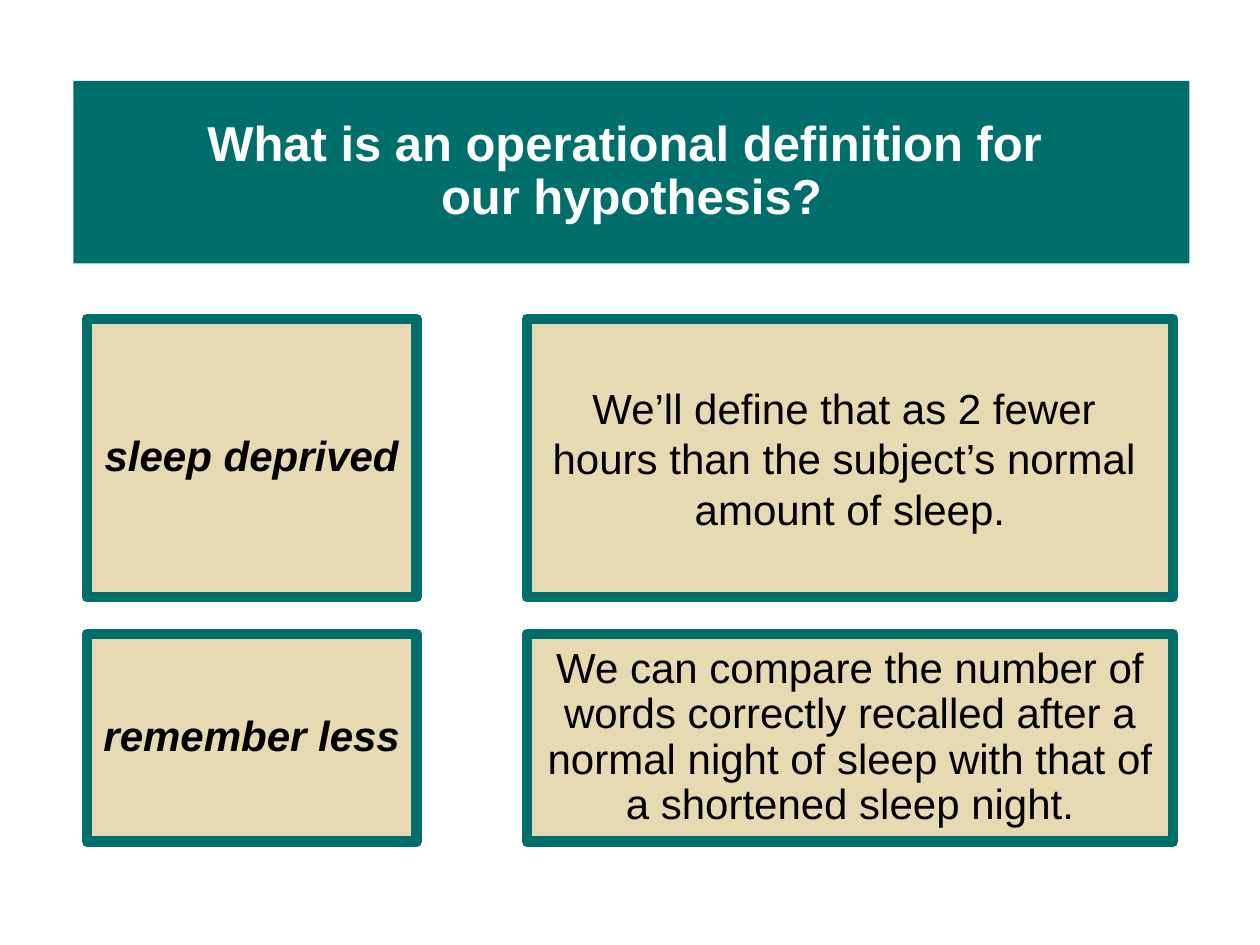
from pptx import Presentation
from pptx.dml.color import RGBColor
from pptx.enum.shapes import MSO_SHAPE
from pptx.enum.text import MSO_ANCHOR, PP_ALIGN
from pptx.util import Cm, Pt

COLORS = {"teal": "006F6C", "sand": "E7D9B1", "white": "FFFFFF", "black": "000000"}


def color(name):
    return RGBColor.from_string(COLORS[name])


def add_box(left, top, width, height, fill, paragraphs, size, font_color,
            bold=False, italic=False, spacing=0.9, before=0):
    """Add a filled rectangle; a newline within a paragraph is a line break."""
    shape = slide.shapes.add_shape(
        MSO_SHAPE.RECTANGLE, Cm(left), Cm(top), Cm(width), Cm(height))
    shape.shadow.inherit = False
    shape.fill.solid()
    shape.fill.fore_color.rgb = color(fill)
    shape.line.fill.background()
    frame = shape.text_frame
    frame.word_wrap = True
    frame.vertical_anchor = MSO_ANCHOR.MIDDLE
    for index, text in enumerate(paragraphs):
        paragraph = frame.add_paragraph() if index else frame.paragraphs[0]
        paragraph.alignment = PP_ALIGN.CENTER
        paragraph.line_spacing = spacing
        paragraph.space_before = Pt(before)
        for number, line in enumerate(text.split("\n")):
            if number:
                paragraph.add_line_break()
            run = paragraph.add_run()
            run.text = line
            run.font.name = "Arial"
            run.font.size = Pt(size)
            run.font.bold = bold
            run.font.italic = italic
            run.font.color.rgb = color(font_color)
    return shape


presentation = Presentation()
presentation.slide_width = Cm(25.4)
presentation.slide_height = Cm(19.05)
slide = presentation.slides.add_slide(presentation.slide_layouts[6])

add_box(1.48, 1.63, 22.5, 3.68, "teal",
        ["What is an operational definition for \nour hypothesis?"],
        28, "white", bold=True)

# Each row: top, height, term, definition paragraphs, line spacing, space before
rows = [
    (6.43, 5.61, "sleep deprived",
     ["We’ll define that as 2 fewer ",
      "hours than the subject’s normal ",
      "amount of sleep."], 1.0, 0),
    (12.78, 4.19, "remember less",
     ["We can compare the number of words correctly recalled after a "
      "normal night of sleep with that of a shortened sleep night."], 0.9, 7.5),
]
for top, height, term, definition, spacing, before in rows:
    term_box = add_box(1.75, top, 6.65, height, "sand", [term], 24, "black",
                       bold=True, italic=True, before=7.5)
    definition_box = add_box(10.62, top, 13.03, height, "sand", definition, 24,
                             "black", spacing=spacing, before=before)
    for box in (term_box, definition_box):
        box.line.color.rgb = color("teal")
        box.line.width = Pt(6)

presentation.save("out.pptx")
